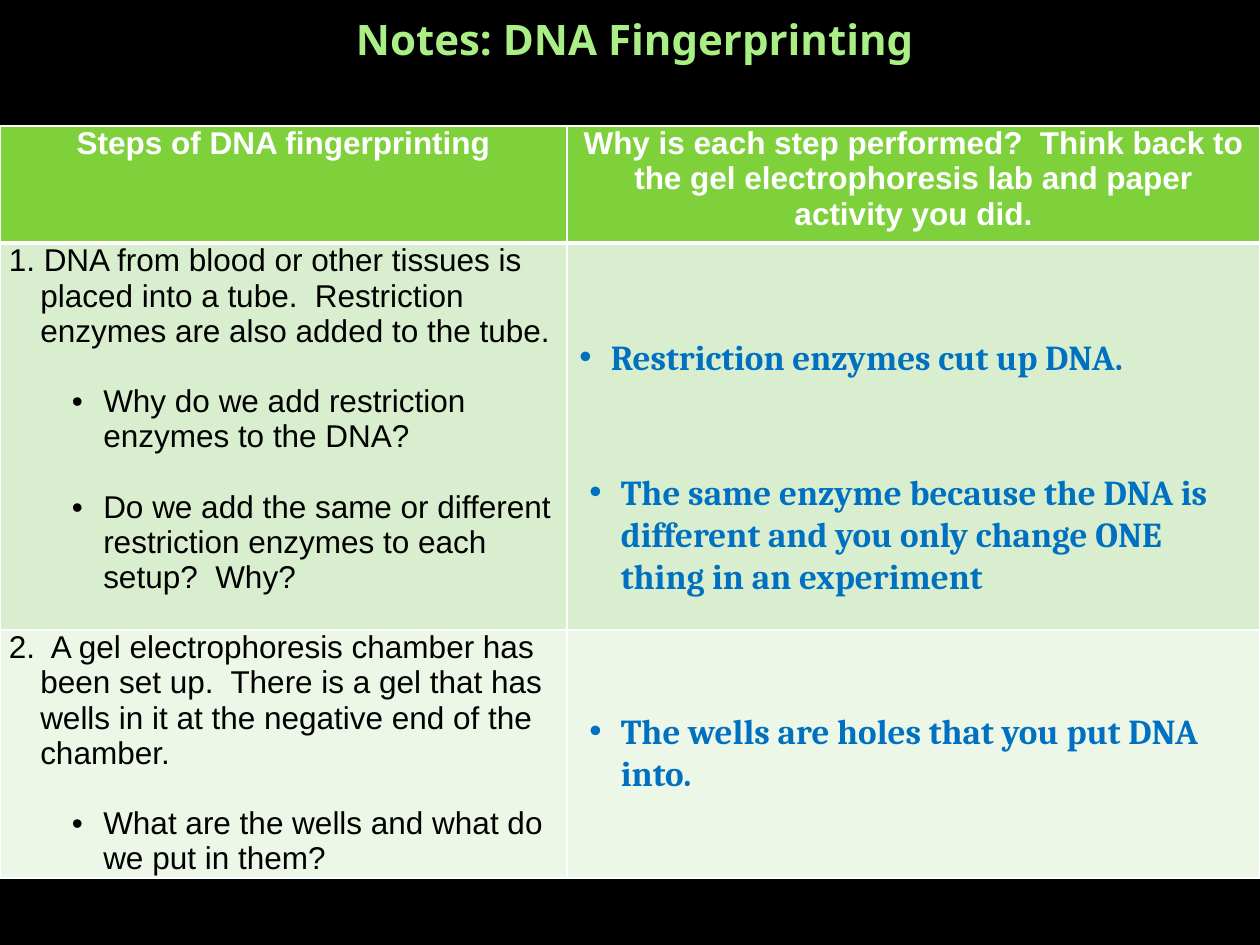
from lxml import etree
from pptx import Presentation, util as u
from pptx.dml.color import RGBColor
from pptx.enum import text
from pptx.oxml.ns import qn

COLORS = {"back": "000000", "title": "A9EF86", "head": "7FD13B", "step1": "D8EECE",
          "step2": "ECF7E8", "white": "FFFFFF", "black": "000000", "answer": "0070C0"}
TITLE = {"name": "Noto Sans", "size": u.Pt(24), "bold": True}
HEAD = {"name": "Arial", "size": u.Pt(18), "bold": True}
BODY = {"name": "Arial", "size": u.Pt(18), "bold": False}
ANSWER = {"name": "Cambria", "size": u.Pt(20), "bold": True}
GAP = u.Pt(20)


class Deck:
    def __init__(self):
        self.prs = Presentation()
        self.prs.slide_width, self.prs.slide_height = u.Inches(10), u.Inches(7.5)
        self.s = self.prs.slides.add_slide(self.prs.slide_layouts[5])
        self.paint(self.s.background.fill, "back")

    def paint(self, fill, color):
        fill.solid()
        fill.fore_color.rgb = RGBColor.from_string(COLORS[color])

    def add_words(self, p, words, style, color, align=text.PP_ALIGN.LEFT):
        p.alignment = align
        r = p.add_run()
        r.text = words
        for key, value in style.items():
            setattr(r.font, key, value)
        self.paint(r.font.fill, color)

    def indent(self, p, left, hang, bullet=True):
        pPr = p._p.get_or_add_pPr()
        pPr.set("marL", str(u.Inches(left)))
        pPr.set("indent", str(-u.Inches(hang)))
        if bullet:
            etree.SubElement(pPr, qn("a:buFont")).set("typeface", "Arial")
            etree.SubElement(pPr, qn("a:buChar")).set("char", "•")

    def frame(self, tf, anchor):
        tf.word_wrap = True
        tf.auto_size = text.MSO_AUTO_SIZE.NONE
        tf.vertical_anchor = anchor

    def title(self, words, box):
        sp = self.s.shapes.title
        sp.left, sp.top, sp.width, sp.height = map(u.Inches, box)
        self.frame(sp.text_frame, text.MSO_ANCHOR.MIDDLE)
        self.add_words(sp.text_frame.paragraphs[0], words, TITLE, "title",
                       text.PP_ALIGN.CENTER)

    def answer(self, words, box, anchor=text.MSO_ANCHOR.TOP):
        tf = self.s.shapes.add_textbox(*map(u.Inches, box)).text_frame
        self.frame(tf, anchor)
        p = tf.paragraphs[0]
        self.add_words(p, words, ANSWER, "answer")
        self.indent(p, 0.25, 0.25)

    def borders(self, cell, widths):
        tcPr = cell._tc.get_or_add_tcPr()
        for i, (side, width) in enumerate(widths.items()):
            ln = etree.Element(qn("a:ln" + side), w=str(u.Pt(width)))
            fill = etree.SubElement(ln, qn("a:solidFill"))
            etree.SubElement(fill, qn("a:srgbClr")).set("val", COLORS["white"])
            tcPr.insert(i, ln)

    def table(self, box, cols, rows, heads, steps):
        shape = self.s.shapes.add_table(len(rows), len(cols), *map(u.Inches, box))
        tbl = shape.table
        for col, width in zip(tbl.columns, cols):
            col.width = u.Inches(width)
        for row, height in zip(tbl.rows, rows):
            row.height = u.Inches(height)
        for i, (row, color) in enumerate(zip(tbl.rows, ("head", "step1", "step2"))):
            for cell in row.cells:
                cell.margin_left = cell.margin_right = u.Inches(0.07)
                cell.margin_top = cell.margin_bottom = 0
                self.paint(cell.fill, color)
                self.borders(cell, {"L": 1, "R": 1, "T": 1 if i != 1 else 3,
                                    "B": 1 if i else 3})
        for cell, words in zip(tbl.rows[0].cells, heads):
            self.add_words(cell.text_frame.paragraphs[0], words, HEAD, "white",
                           text.PP_ALIGN.CENTER)
        for i, (step, *questions) in enumerate(steps, 1):
            tf = tbl.cell(i, 0).text_frame
            p = tf.paragraphs[0]
            self.add_words(p, step, BODY, "black")
            self.indent(p, 0.25, 0.25, bullet=False)
            for question in questions:
                p = tf.add_paragraph()
                p.space_before = GAP
                self.add_words(p, question, BODY, "black")
                self.indent(p, 0.75, 0.25)


def main():
    d = Deck()
    d.title("Notes: DNA Fingerprinting ", (0.58, 0, 9, 0.62))
    d.table(
        (0, 1, 10, 5.97), (4.5, 5.5), (0.93, 3.07, 1.97),
        ("Steps of DNA fingerprinting",
         "Why is each step performed?  Think back to the gel electrophoresis lab "
         "and paper activity you did."),
        (("1. DNA from blood or other tissues is placed into a tube.  Restriction "
          "enzymes are also added to the tube.",
          "Why do we add restriction enzymes to the DNA?",
          "Do we add the same or different restriction enzymes to each setup?  Why?"),
         ("2.  A gel electrophoresis chamber has been set up.  There is a gel that has "
          "wells in it at the negative end of the chamber.",
          "What are the wells and what do we put in them?")))
    d.answer("Restriction enzymes cut up DNA.", (4.5, 2.61, 5.5, 0.44))
    d.answer("The same enzyme because the DNA is different and you only change ONE "
             "thing in an experiment", (4.58, 3.33, 5.17, 1.45), text.MSO_ANCHOR.BOTTOM)
    d.answer("The wells are holes that you put DNA into.", (4.58, 5.58, 5.17, 0.77))
    d.prs.save("out.pptx")


if __name__ == "__main__":
    main()
